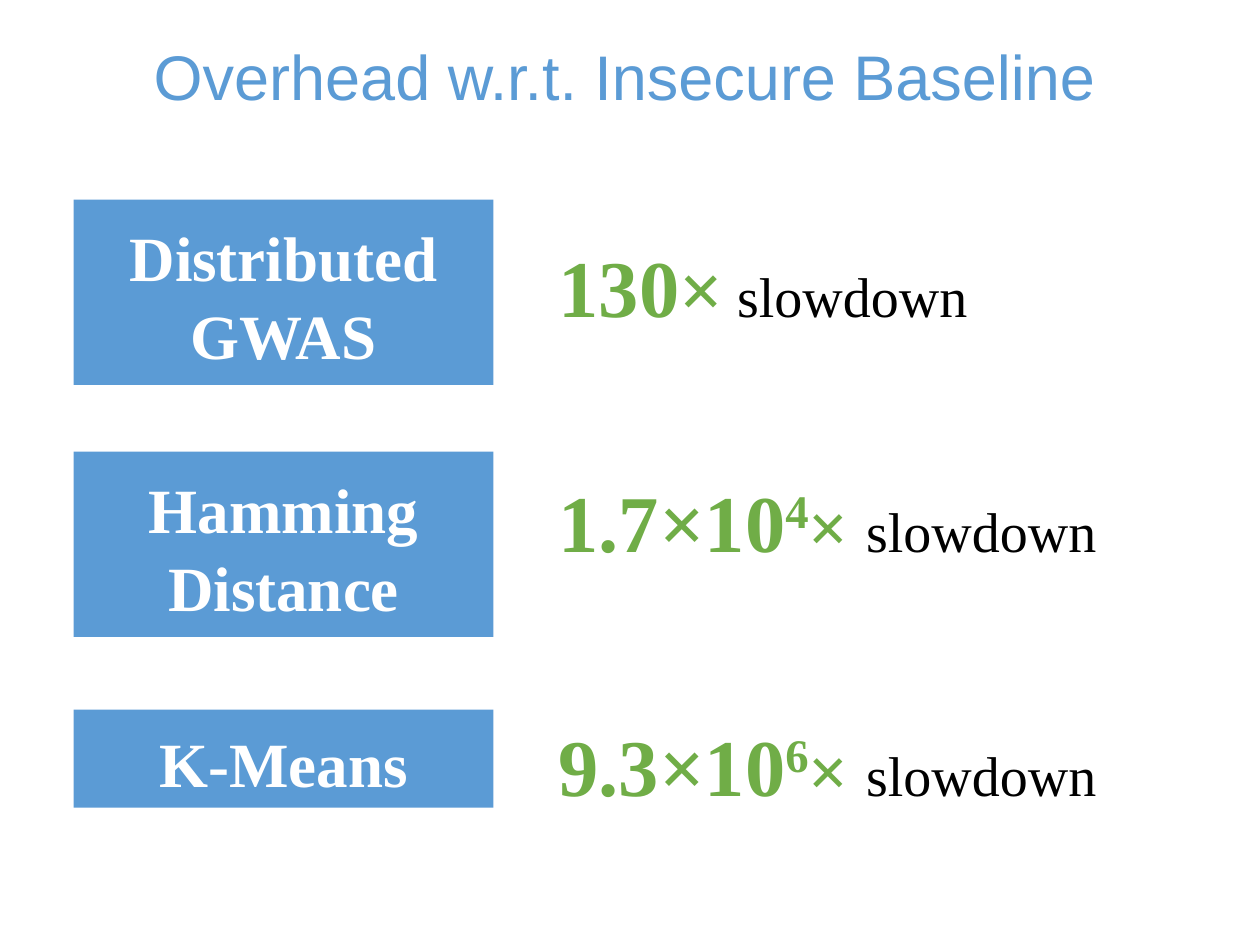
import pptx
import pptx.util
import pptx.dml.color
import pptx.enum.shapes
import pptx.enum.text

Pt = pptx.util.Pt
Align = pptx.enum.text.PP_ALIGN
Anchor = pptx.enum.text.MSO_ANCHOR

HUES = {"blue": "5B9BD5", "green": "70AD47", "white": "FFFFFF", "black": "000000"}
SERIF, SANS = "Times New Roman", "Arial"


class Deck:
    """Holds the style and the current slide."""

    def __init__(self, wide, high):
        self.prs = pptx.Presentation()
        self.prs.slide_width, self.prs.slide_height = Pt(wide), Pt(high)
        self.slide = self.prs.slides.add_slide(self.prs.slide_layouts[1])

    def hue(self, name):
        return pptx.dml.color.RGBColor.from_string(HUES[name])

    def place(self, shape, *spot):
        for key, size in zip(("left", "top", "width", "height"), spot):
            setattr(shape, key, Pt(size))

    def frame(self, shape, **form):
        base = {"word_wrap": True, "auto_size": pptx.enum.text.MSO_AUTO_SIZE.NONE}
        for key, value in (base | form).items():
            setattr(shape.text_frame, key, value)
        return shape.text_frame

    def para(self, frame, first, **form):
        para = frame.paragraphs[0] if first else frame.add_paragraph()
        base = {"space_before": Pt(0), "space_after": Pt(0), "line_spacing": 1.0}
        for key, value in (base | form).items():
            setattr(para, key, value)
        return para

    def run(self, para, text, size, hue, bold=False, face=SERIF, lift=0):
        run = para.add_run()
        run.text = text
        form = {"name": face, "size": Pt(size), "bold": bold}
        for key, value in form.items():
            setattr(run.font, key, value)
        run.font.color.rgb = self.hue(hue)
        if lift:
            run.font._element.set("baseline", str(lift * 1000))

    def title(self, text, *spot):
        shape = self.slide.shapes.title
        self.place(shape, *spot)
        frame = self.frame(shape, vertical_anchor=Anchor.TOP)
        para = self.para(frame, True, alignment=Align.CENTER, space_before=Pt(4))
        self.run(para, text, 36, "blue", face=SANS)

    def body(self, rows, indent, *spot):
        shape = self.slide.placeholders[1]
        self.place(shape, *spot)
        frame = self.frame(shape, vertical_anchor=Anchor.TOP)
        for i, (gap, parts) in enumerate(rows):
            para = self.para(frame, i == 0, space_before=Pt(gap))
            props = para._p.get_or_add_pPr()
            props.set("marL", str(Pt(indent)))
            props.set("indent", "0")
            props.append(pptx.oxml.parse_xml(
                '<a:buNone xmlns:a="http://schemas.openxmlformats.org/drawingml/2006/main"/>'))
            for text, form in parts:
                self.run(para, text, **form)

    def box(self, lines, *spot):
        kind = pptx.enum.shapes.MSO_SHAPE.RECTANGLE
        shape = self.slide.shapes.add_shape(kind, *map(Pt, spot))
        shape.shadow.inherit = False
        shape.fill.solid()
        shape.fill.fore_color.rgb = self.hue("blue")
        shape.line.fill.background()
        frame = self.frame(shape, vertical_anchor=Anchor.MIDDLE, margin_top=Pt(7.2))
        for i, text in enumerate(lines):
            para = self.para(frame, i == 0, alignment=Align.CENTER, space_before=Pt(1.5))
            self.run(para, text, 36, "white", bold=True)


def main():
    deck = Deck(720, 540)
    deck.title("Overhead w.r.t. Insecure Baseline", 0, 18, 714, 90)

    # Slowdown figures
    big = {"size": 46, "hue": "green", "bold": True}
    word = {"size": 32, "hue": "black"}

    def power(base, top):
        return [(base, big), (top, big | {"lift": 30}),
                ("× ", big | {"size": 40}), ("slowdown", word)]

    first = [("130", big), ("×", big | {"size": 44}), (" slowdown", word)]
    rows = [(5, first), (79, power("1.7×10", "4")), (84, power("9.3×10", "6"))]
    deck.body(rows, 216, 96, 132, 545, 334)

    # Task boxes
    tasks = [(114, 106, ["Distributed", "GWAS"]),
             (258, 106, ["Hamming", "Distance"]),
             (405.5, 56, ["K-Means"])]
    for top, high, lines in tasks:
        deck.box(lines, 42, top, 240, high)

    deck.prs.save("out.pptx")


if __name__ == "__main__":
    main()
